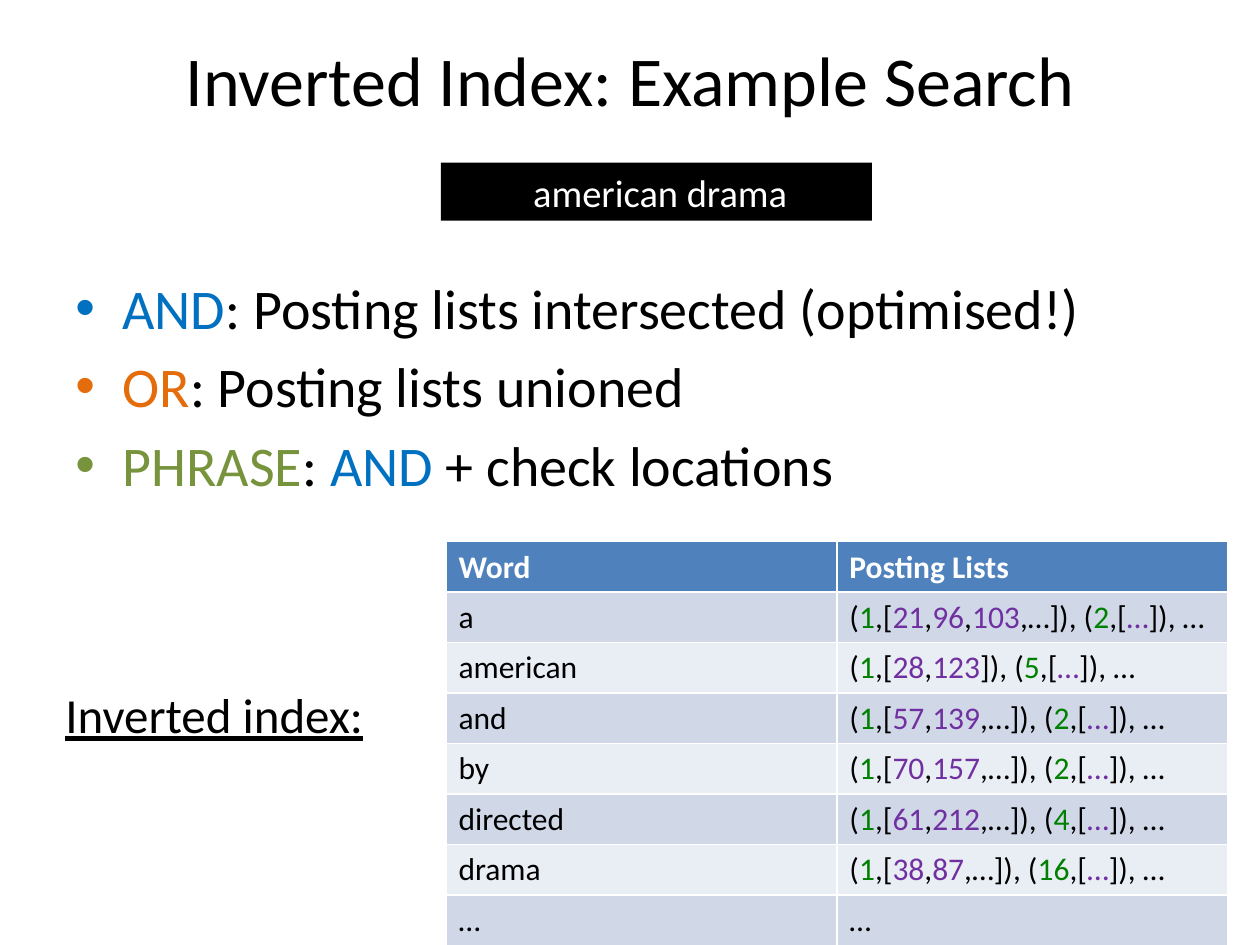
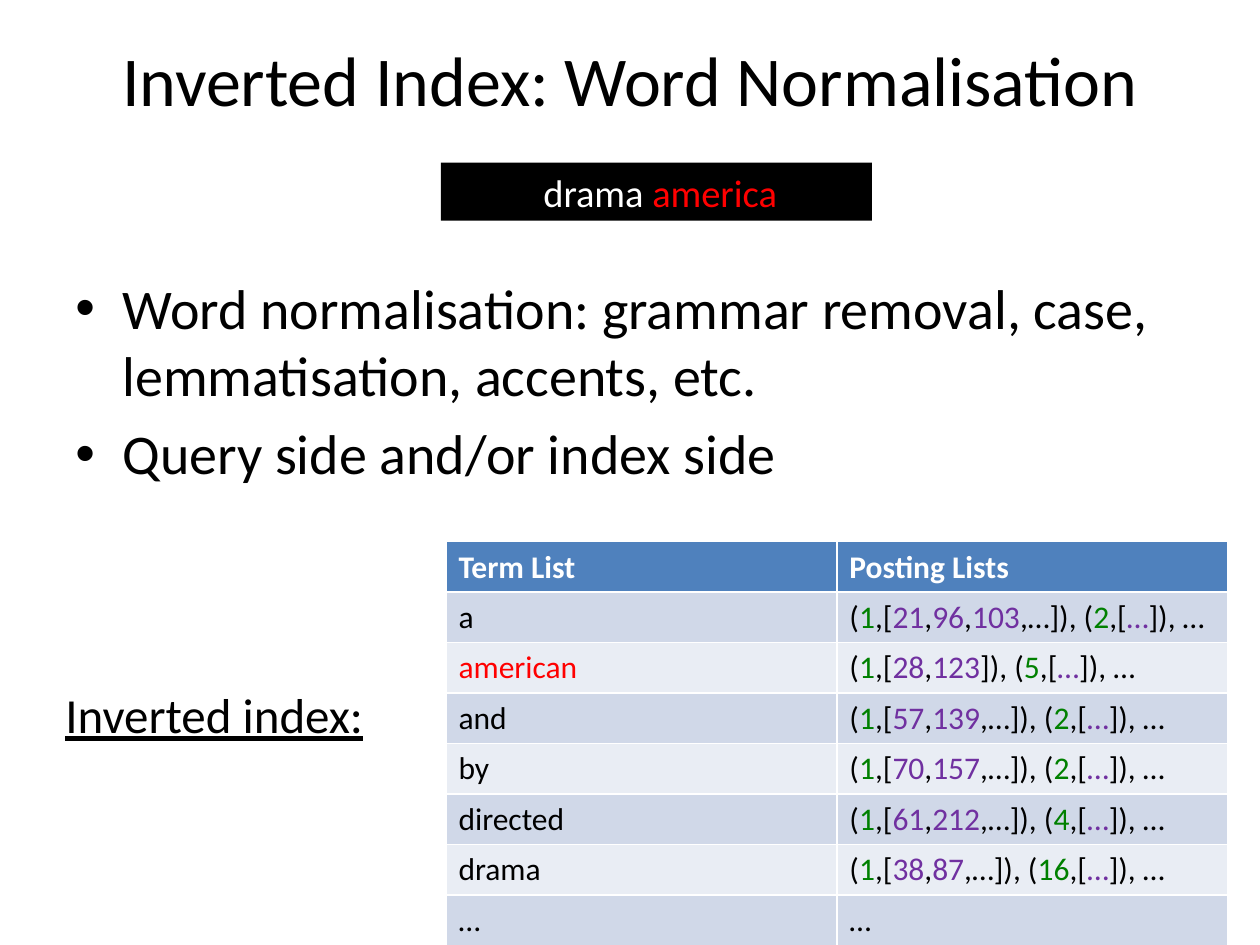
import pptx
import pptx.util
import pptx.dml.color
import pptx.enum.shapes
import pptx.enum.text
import pptx.oxml
from pptx.util import Cm

FONT = "Calibri"
COLORS = {
    "text": "000000", "white": "FFFFFF", "header": "4F81BD",
    "band_dark": "D0D8E8", "band_light": "E9EDF4",
    "doc": "008000", "location": "7030A0", "changed": "FF0000",
    "and": "0070C0", "or": "E46C0A", "phrase": "77933C",
}
NS = 'xmlns:a="http://schemas.openxmlformats.org/drawingml/2006/main"'

# Word, locations in document 1, end of that list, second document
POSTINGS = [
    ("a", ["21", "96", "103"], ",…", "2"),
    ("american", ["28", "123"], "", "5"),
    ("and", ["57", "139"], ",…", "2"),
    ("by", ["70", "157"], ",…", "2"),
    ("directed", ["61", "212"], ",…", "4"),
    ("drama", ["38", "87"], ",…", "16"),
]

SLIDES = [
    {
        "title": "Inverted Index: Example Search",
        "query": [("american drama", "white")],
        "bullets": [
            [("AND", "and"), (": Posting lists intersected (optimised!)", "text")],
            [("OR", "or"), (": Posting lists unioned", "text")],
            [("PHRASE", "phrase"), (": ", "text"), ("AND", "and"),
             (" + check locations", "text")],
        ],
        "word_header": "Word",
        "changed_words": [],
    },
    {
        "title": "Inverted Index: Word Normalisation",
        "query": [("drama ", "white"), ("america", "changed")],
        "bullets": [
            [("Word normalisation: grammar removal, case, "
              "lemmatisation, accents, etc.", "text")],
            [("Query side and/or index side", "text")],
        ],
        "word_header": "Term List",
        "changed_words": ["american"],
    },
]


def rgb(name):
    return pptx.dml.color.RGBColor.from_string(COLORS[name])


def write(p, runs, size, **font):
    """Add (text, colour name) runs to a paragraph, all in one format."""
    style = {"name": FONT, "size": pptx.util.Pt(size), **font}
    for text, color in runs:
        r = p.add_run()
        r.text = text
        for key, value in style.items():
            setattr(r.font, key, value)
        r.font.color.rgb = rgb(color)


prs = pptx.Presentation()
prs.slide_width, prs.slide_height = Cm(25.4), Cm(19.05)
title_only = prs.slide_layouts[5]

for content in SLIDES:
    slide = prs.slides.add_slide(title_only)

    # Title
    sp = slide.shapes.title
    box = {"left": Cm(1.27), "top": Cm(0), "width": Cm(22.86), "height": Cm(3.18)}
    for key, value in box.items():
        setattr(sp, key, value)
    tf = sp.text_frame
    tf.vertical_anchor = pptx.enum.text.MSO_ANCHOR.MIDDLE
    p = tf.paragraphs[0]
    p.alignment = pptx.enum.text.PP_ALIGN.CENTER
    write(p, [(content["title"], "text")], 40)

    # Bullets start below the query bar
    sp = slide.shapes.add_textbox(Cm(1.27), Cm(3.81), Cm(22.86), Cm(13.54))
    tf = sp.text_frame
    tf.word_wrap = True
    tf.margin_top = Cm(1.7)
    for i, runs in enumerate(content["bullets"]):
        p = tf.add_paragraph() if i else tf.paragraphs[0]
        p.space_before = pptx.util.Pt(6.4 if i else 0)
        pPr = p._p.get_or_add_pPr()
        pPr.set("marL", str(Cm(0.95)))
        pPr.set("indent", str(-Cm(0.95)))
        for bullet in ('<a:buFont %s typeface="Arial"/>', '<a:buChar %s char="•"/>'):
            pPr.append(pptx.oxml.parse_xml(bullet % NS))
        write(p, runs, 32)

    # Query bar
    sp = slide.shapes.add_shape(pptx.enum.shapes.MSO_SHAPE.RECTANGLE,
                                Cm(8.89), Cm(3.28), Cm(8.69), Cm(1.17))
    sp.shadow.inherit = False
    sp.fill.solid()
    sp.fill.fore_color.rgb = rgb("text")
    sp.line.fill.background()
    tf = sp.text_frame
    tf.vertical_anchor = pptx.enum.text.MSO_ANCHOR.TOP
    p = tf.paragraphs[0]
    p.alignment = pptx.enum.text.PP_ALIGN.CENTER
    p._p.get_or_add_pPr().set("marL", str(Cm(0.15)))
    write(p, content["query"], 22)

    # Inverted index table
    rows = [([(content["word_header"], "white")], [("Posting Lists", "white")])]
    for word, locations, ending, second_doc in POSTINGS:
        runs = [("(", "text"), ("1", "doc"), (",[", "text")]
        for i, location in enumerate(locations):
            if i:
                runs.append((",", "text"))
            runs.append((location, "location"))
        runs += [(ending + "]), (", "text"), (second_doc, "doc"), (",[", "text"),
                 ("…", "location"), ("]), …", "text")]
        color = "changed" if word in content["changed_words"] else "text"
        rows.append(([(word, color)], runs))
    rows.append(([("…", "text")], [("…", "text")]))

    table = slide.shapes.add_table(len(rows), 2, Cm(8.99), Cm(10.92),
                                   Cm(15.76), Cm(0.86) * len(rows)).table
    for i, row in enumerate(rows):
        table.rows[i].height = Cm(0.86)
        fill = "header" if i == 0 else "band_dark" if i % 2 else "band_light"
        for j, runs in enumerate(row):
            cell = table.cell(i, j)
            cell.fill.solid()
            cell.fill.fore_color.rgb = rgb(fill)
            write(cell.text_frame.paragraphs[0], runs, 18, bold=i == 0)

    # Table label
    sp = slide.shapes.add_textbox(Cm(1.07), Cm(13.67), Cm(7.42), Cm(1.45))
    tf = sp.text_frame
    tf.word_wrap = True
    tf.auto_size = pptx.enum.text.MSO_AUTO_SIZE.SHAPE_TO_FIT_TEXT
    write(tf.paragraphs[0], [("Inverted index:", "text")], 28, underline=True)

prs.save("out.pptx")
